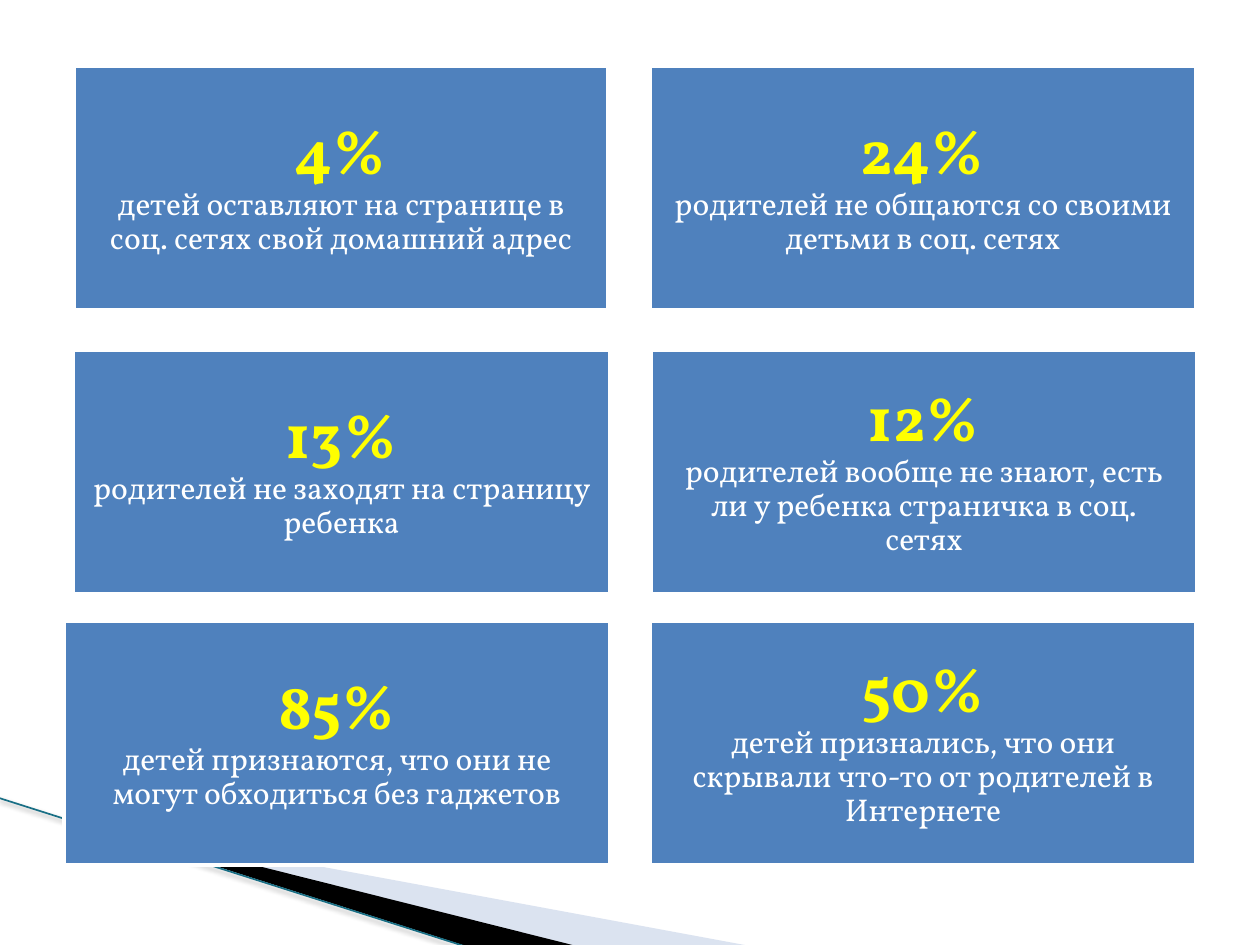
from dataclasses import dataclass

from lxml import etree
from pptx import Presentation
from pptx.dml.color import RGBColor
from pptx.enum.shapes import MSO_CONNECTOR, MSO_SHAPE
from pptx.enum.text import MSO_ANCHOR, PP_ALIGN
from pptx.oxml.ns import qn
from pptx.util import Pt

RECT = MSO_SHAPE.RECTANGLE
STRAIGHT = MSO_CONNECTOR.STRAIGHT
MIDDLE = MSO_ANCHOR.MIDDLE
CENTER = PP_ALIGN.CENTER
SCALE = 914400 / 126


@dataclass(frozen=True)
class Theme:
    font: str = "Vollkorn"
    card: str = "4F81BD"
    white: str = "FFFFFF"
    yellow: str = "FFFF00"
    pale: str = "A7B9DB"
    black: str = "000000"
    teal: str = "196F85"
    big: int = 36
    small: int = 18


THEME = Theme()
HIGH = 244
INSET = 19

ROWS = [
    (66, [
        (74, 534, "4%", "детей оставляют на странице в соц. сетях свой домашний адрес"),
        (650, 546, "24%", "родителей не общаются со своими детьми в соц. сетях"),
    ]),
    (350, [
        (73, 537, "13%", "родителей не заходят на страницу ребенка"),
        (651, 546, "12%", "родителей вообще не знают, есть ли у ребенка страничка в соц. сетях"),
    ]),
    (621, [
        (64, 546, "85%", "детей признаются, что они не могут обходиться без гаджетов"),
        (650, 546, "50%", "детей признались, что они скрывали что-то от родителей в Интернете"),
    ]),
]


def px(n):
    return round(n * SCALE)


def rgb(code):
    return RGBColor.from_string(code)


def paint(shape, color):
    shape.shadow.inherit = False
    shape.fill.solid()
    shape.fill.fore_color.rgb = rgb(color)


def add_alpha(color, value):
    etree.SubElement(color, qn("a:alpha")).set("val", str(value * 1000))


def add_wedge(slide, points, color, alpha=None):
    pen = slide.shapes.build_freeform(*points[0], scale=SCALE)
    pen.add_line_segments(points[1:], close=True)
    wedge = pen.convert_to_shape()
    paint(wedge, color)
    wedge.line.fill.background()
    if alpha:
        add_alpha(wedge.element.spPr.find(".//" + qn("a:srgbClr")), alpha)


def add_line(slide, start, end):
    line = slide.shapes.add_connector(STRAIGHT, *map(px, start + end))
    line.line.color.rgb = rgb(THEME.teal)
    line.line.width = Pt(0.96)
    effect = etree.SubElement(line.element.spPr, qn("a:effectLst"))
    shadow = etree.SubElement(effect, qn("a:outerShdw"))
    shadow.set("blurRad", str(Pt(3.1)))
    shadow.set("dist", str(Pt(1.6)))
    shadow.set("dir", "5400000")
    color = etree.SubElement(shadow, qn("a:srgbClr"))
    color.set("val", THEME.black)
    add_alpha(color, 38)


def style_text(para, size, color, bold):
    para.alignment = CENTER
    para.line_spacing = 0.9
    for run in para.runs:
        run.font.name = THEME.font
        run.font.size = Pt(size)
        run.font.bold = bold
        run.font.color.rgb = rgb(color)


def add_card(slide, left, top, width, share, fact):
    card = slide.shapes.add_shape(RECT, px(left), px(top), px(width), px(HIGH))
    paint(card, THEME.card)
    card.line.color.rgb = rgb(THEME.white)
    card.line.width = Pt(2)
    frame = card.text_frame
    frame.word_wrap = True
    frame.vertical_anchor = MIDDLE
    frame.margin_left = frame.margin_right = px(INSET)
    frame.margin_top = frame.margin_bottom = px(INSET)
    frame.text = f"{share}\n{fact}"
    head, body = frame.paragraphs
    style_text(head, THEME.big, THEME.yellow, True)
    style_text(body, THEME.small, THEME.white, False)


def main():
    deck = Presentation()
    deck.slide_width, deck.slide_height = px(1260), px(945)
    slide = deck.slides.add_slide(deck.slide_layouts[6])
    add_wedge(slide, [(69, 820), (750, 946), (575, 946), (69, 819)], THEME.pale, 40)
    add_wedge(slide, [(67, 818), (576, 946), (469, 947), (68, 819)], THEME.black)
    add_line(slide, (-1, 798), (467, 947))
    for top, cards in ROWS:
        for left, width, share, fact in cards:
            add_card(slide, left, top, width, share, fact)
    deck.save("out.pptx")


if __name__ == "__main__":
    main()
